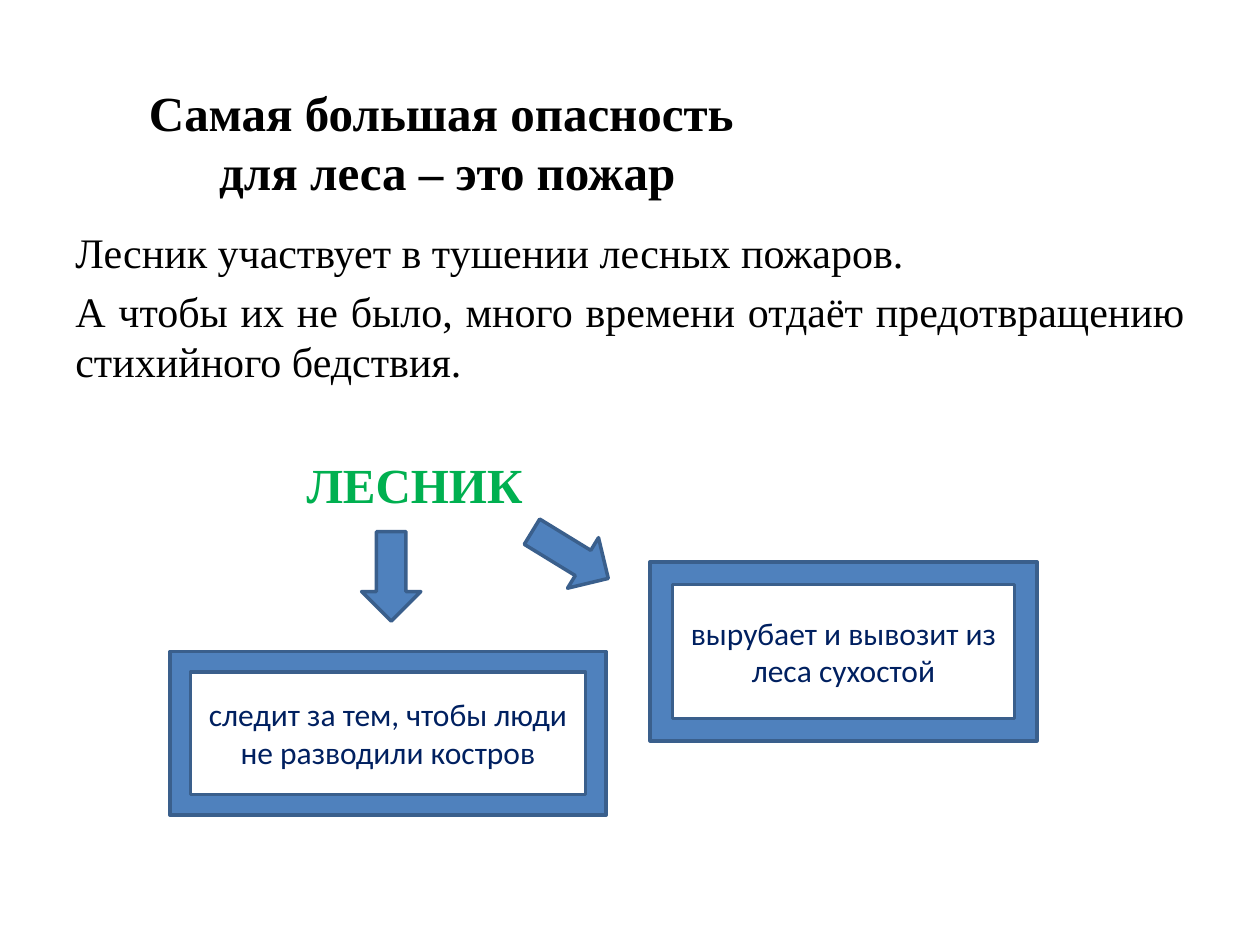
from pptx import Presentation
from pptx.dml.color import RGBColor
from pptx.enum.shapes import MSO_SHAPE
from pptx.enum.text import MSO_ANCHOR, PP_ALIGN
from pptx.util import Inches, Pt

SERIF = "Times New Roman"


def color(value):
    return RGBColor.from_string(value)


def write(frame, paragraphs, size=24, font=SERIF, fill="000000", bold=False,
          align=PP_ALIGN.CENTER, anchor=MSO_ANCHOR.TOP, gap=0):
    frame.word_wrap = True
    frame.vertical_anchor = anchor
    for index, text in enumerate(paragraphs):
        paragraph = frame.add_paragraph() if index else frame.paragraphs[0]
        paragraph.text = text
        paragraph.alignment = align
        paragraph.space_before = Pt(gap if index else 0)
        paragraph.font.size = Pt(size)
        paragraph.font.name = font
        paragraph.font.bold = bold
        paragraph.font.color.rgb = color(fill)


def place_title(slide, box):
    title = slide.shapes.title
    title.left, title.top, title.width, title.height = map(Inches, box)
    write(title.text_frame, ["Самая большая опасность \vдля леса – это пожар"],
          size=28, bold=True, anchor=MSO_ANCHOR.BOTTOM)


def add_text(slide, box, paragraphs, **style):
    frame = slide.shapes.add_textbox(*map(Inches, box)).text_frame
    write(frame, paragraphs, **style)


def add_blue_shape(slide, kind, box):
    shape = slide.shapes.add_shape(kind, *map(Inches, box))
    shape.shadow.inherit = False
    shape.fill.solid()
    shape.fill.fore_color.rgb = color("4F81BD")
    shape.line.color.rgb = color("3A5F8C")
    shape.line.width = Pt(2)
    return shape


def add_duty(slide, box, duty):
    duty_frame = add_blue_shape(slide, MSO_SHAPE.FRAME, box)
    write(duty_frame.text_frame, [duty], size=18, font="Calibri",
          fill="002060", anchor=MSO_ANCHOR.MIDDLE)


def add_forester_scheme(slide, left, top):
    add_text(slide, (left + 0.69, top, 2.5, 0.57), ["ЛЕСНИК"],
             size=28, fill="00B050", bold=True)
    duties = [
        ((0, 1.61, 3.46, 1.3), "следит за тем, чтобы люди не разводили костров"),
        ((3.81, 0.9, 3.07, 1.42), "вырубает и вывозит из леса сухостой"),
    ]
    for (x, y, width, height), duty in duties:
        add_duty(slide, (left + x, top + y, width, height), duty)
    for x, y, angle in [(1.52, 0.66, 0), (2.94, 0.49, 301.5)]:
        arrow = add_blue_shape(slide, MSO_SHAPE.DOWN_ARROW,
                               (left + x, top + y, 0.47, 0.71))
        arrow.rotation = angle


def main():
    deck = Presentation()
    deck.slide_width, deck.slide_height = Inches(10), Inches(7.5)
    slide = deck.slides.add_slide(deck.slide_layouts[5])
    place_title(slide, (0.67, 0.19, 5.76, 1.45))
    add_text(slide, (0.5, 1.75, 9, 1.5), [
        "Лесник участвует в тушении лесных пожаров.",
        "А чтобы их не было, много времени отдаёт предотвращению "
        "стихийного бедствия.",
    ], align=PP_ALIGN.JUSTIFY, gap=4.8)
    add_forester_scheme(slide, 1.35, 3.56)
    deck.save("out.pptx")


if __name__ == "__main__":
    main()
